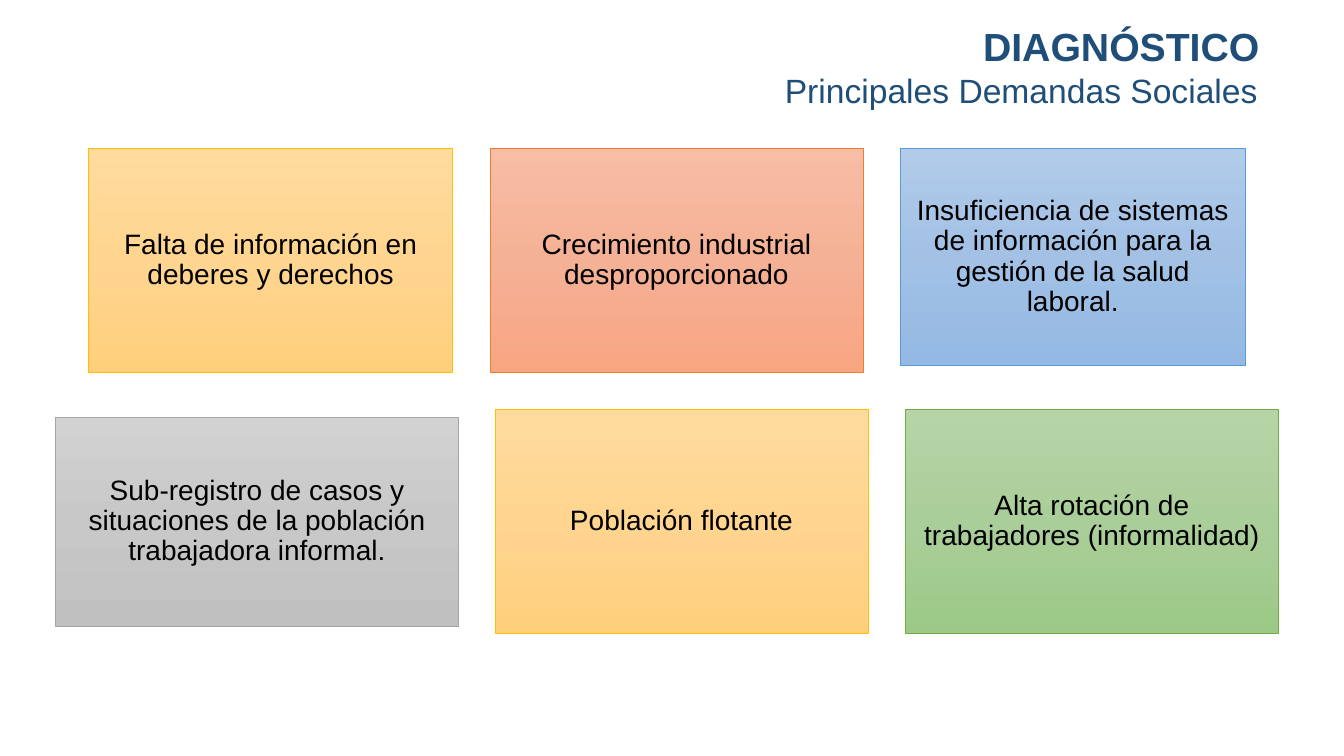
from copy import deepcopy

from pptx import Presentation
from pptx.dml.color import RGBColor
from pptx.enum.shapes import MSO_SHAPE
from pptx.enum.text import MSO_ANCHOR, MSO_AUTO_SIZE, PP_ALIGN
from pptx.util import Inches, Pt

PX = Inches(1) // 100

THEME = {
    "font": "Arial",
    "title_size": 28,
    "subtitle_size": 24,
    "card_size": 20,
    "heading": "1F4E79",
    "text": "000000",
    "gold": ("FFC000", ["FFDB9E", "FFD590", "FFD07C"]),
    "orange": ("ED7D31", ["F7BDA5", "F5B196", "F8A582"]),
    "blue": ("5B9BD5", ["B1CBE9", "A3C1E5", "93B9E4"]),
    "gray": ("A5A5A5", ["D2D2D2", "C8C8C8", "C0C0C0"]),
    "green": ("70AD47", ["B5D5A7", "AACE9A", "9CC987"]),
}

DEMANDS = [
    ("Falta de información en deberes y derechos", "gold", (88, 147, 361, 222)),
    ("Crecimiento industrial desproporcionado", "orange", (486, 147, 370, 222)),
    ("Insuficiencia de sistemas de información para la gestión de la salud laboral.",
     "blue", (893, 147, 342, 216)),
    ("Sub-registro de casos y situaciones de la población trabajadora informal.",
     "gray", (55, 414, 400, 207)),
    ("Población flotante", "gold", (491, 406, 370, 222)),
    ("Alta rotación de trabajadores (informalidad)", "green", (898, 406, 370, 222)),
]


def write(shape, text, size, color, alignment, anchor, bold=False):
    frame = shape.text_frame
    frame.text = text
    frame.word_wrap = True
    frame.auto_size = MSO_AUTO_SIZE.NONE
    frame.vertical_anchor = anchor
    paragraph = frame.paragraphs[0]
    paragraph.alignment = alignment
    font = paragraph.runs[0].font
    font.name = THEME["font"]
    font.size = Pt(THEME[size])
    font.bold = bold
    font.color.rgb = RGBColor.from_string(THEME[color])
    return frame


def fill_gradient(shape, colors):
    shape.fill.gradient()
    shape.fill.gradient_angle = 270
    first_stop = shape._element.spPr.xpath("./a:gradFill/a:gsLst/a:gs")[0]
    first_stop.addnext(deepcopy(first_stop))
    for index, (stop, color) in enumerate(zip(shape.fill.gradient_stops, colors)):
        stop.position = index / 2
        stop.color.rgb = RGBColor.from_string(color)


presentation = Presentation()
presentation.slide_width = 1333 * PX
presentation.slide_height = 750 * PX
slide = presentation.slides.add_slide(presentation.slide_layouts[5])

for text, color, bounds in DEMANDS:
    line_color, gradient = THEME[color]
    card = slide.shapes.add_shape(MSO_SHAPE.RECTANGLE, *(value * PX for value in bounds))
    card.shadow.inherit = False
    fill_gradient(card, gradient)
    card.line.color.rgb = RGBColor.from_string(line_color)
    card.line.width = Pt(0.5)
    frame = write(card, text, "card_size", "text", PP_ALIGN.CENTER, MSO_ANCHOR.MIDDLE)
    frame.margin_left = frame.margin_right = 8 * PX
    frame.margin_top = frame.margin_bottom = 8 * PX
    frame.paragraphs[0].line_spacing = 0.9

subtitle = slide.shapes.add_textbox(632 * PX, 64 * PX, 625 * PX, 51 * PX)
write(subtitle, "Principales Demandas Sociales", "subtitle_size", "heading",
      PP_ALIGN.RIGHT, MSO_ANCHOR.TOP)

title = slide.shapes.title
title.left, title.top, title.width, title.height = (
    value * PX for value in (962, 17, 297, 57))
write(title, "DIAGNÓSTICO", "title_size", "heading", PP_ALIGN.RIGHT, MSO_ANCHOR.TOP, bold=True)

presentation.save("out.pptx")
